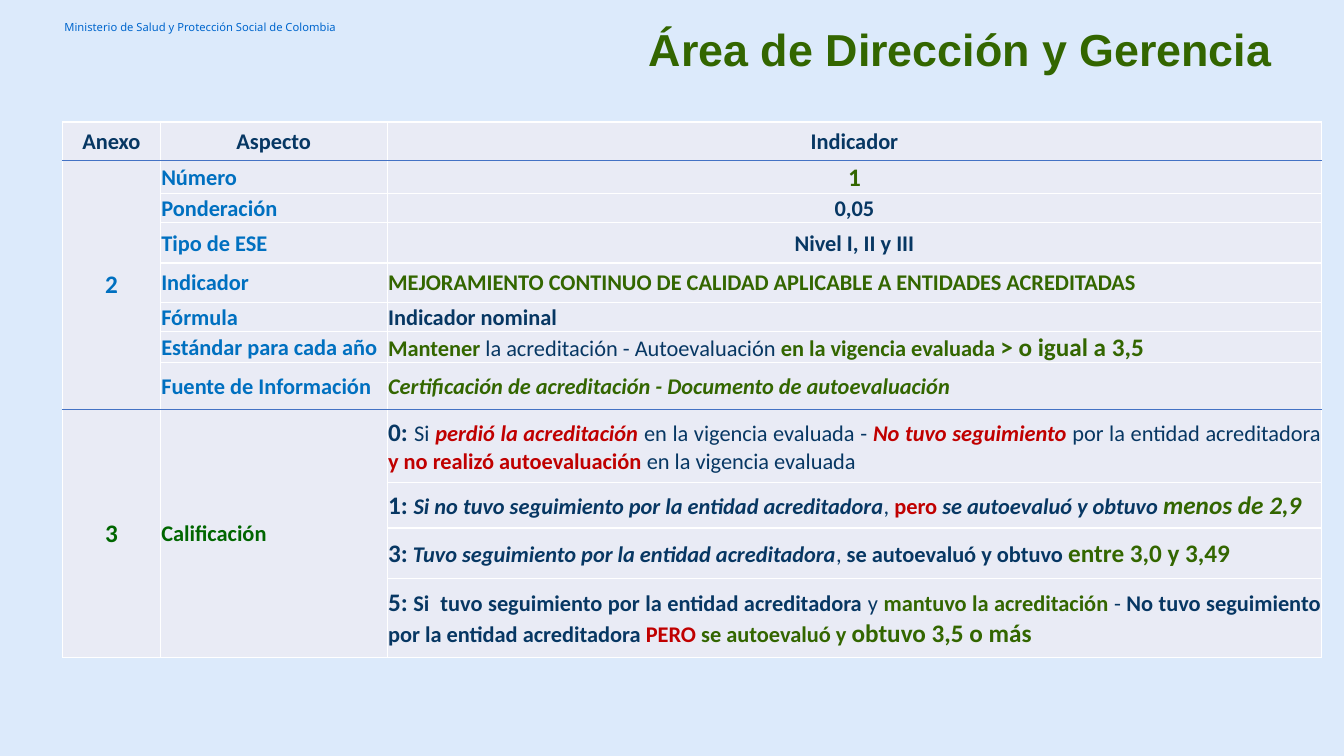
from lxml.etree import SubElement
from pptx import Presentation
from pptx.dml.color import RGBColor
from pptx.enum.text import MSO_ANCHOR, PP_ALIGN
from pptx.oxml.ns import qn
from pptx.util import Inches, Pt

NAVY = RGBColor(0x07, 0x37, 0x63)
BLUE = RGBColor(0x00, 0x70, 0xC0)
HEADER_BLUE = RGBColor(0x00, 0x66, 0xCD)
RULE_BLUE = RGBColor(0x44, 0x72, 0xC4)
GREEN = RGBColor(0x33, 0x66, 0x00)
DARK_GREEN = RGBColor(0x00, 0x66, 0x00)
RED = RGBColor(0xC0, 0x00, 0x00)
WHITE = RGBColor(0xFF, 0xFF, 0xFF)
CELL_FILL = RGBColor(0xE9, 0xEB, 0xF5)
BACKGROUND = RGBColor(0xDC, 0xEA, 0xFB)

COLUMN_WIDTHS = [0.97, 2.25, 9.27]
ROW_HEIGHTS = [0.38, 0.33, 0.29, 0.4, 0.39, 0.29, 0.31, 0.46, 0.73, 0.45, 0.5, 0.78]
RULED_ROWS = (0, 7)
LEFT, CENTER, JUSTIFY = PP_ALIGN.LEFT, PP_ALIGN.CENTER, PP_ALIGN.JUSTIFY

HEADINGS = ["Anexo", "Aspecto", "Indicador"]
ASPECTS = ["Número", "Ponderación", "Tipo de ESE", "Indicador", "Fórmula",
           "Estándar para cada año", "Fuente de Información"]
GROUPS = [
    (0, 1, 7, CENTER, ("2", BLUE, "b", 18)),
    (0, 8, 11, CENTER, ("3", DARK_GREEN, "b", 18)),
    (1, 8, 11, LEFT, ("Calificación", DARK_GREEN, "b")),
]
INDICATORS = [
    (CENTER, [("1", GREEN, "b", 18)]),
    (CENTER, [("0,05", NAVY, "b")]),
    (CENTER, [("Nivel I, II y III", NAVY, "b")]),
    (JUSTIFY, [("MEJORAMIENTO CONTINUO DE CALIDAD APLICABLE A ENTIDADES ACREDITADAS", GREEN, "b")]),
    (JUSTIFY, [("Indicador nominal", NAVY, "b")]),
    (LEFT, [("Mantener", GREEN, "b"),
            (" la acreditación - Autoevaluación ", NAVY, ""),
            ("en la vigencia evaluada ", GREEN, "b"),
            ("> o igual a 3,5", GREEN, "b", 18)]),
    (JUSTIFY, [("Certificación de acreditación - Documento de autoevaluación", GREEN, "bi")]),
    (JUSTIFY, [("0: ", NAVY, "b", 18),
               ("Si ", NAVY, ""),
               ("perdió la acreditación ", RED, "bi"),
               ("en la vigencia evaluada - ", NAVY, ""),
               ("No tuvo seguimiento ", RED, "bi"),
               ("por la entidad acreditadora ", NAVY, ""),
               ("y no realizó autoevaluación ", RED, "b"),
               ("en la vigencia evaluada", NAVY, "")]),
    (JUSTIFY, [("1: ", NAVY, "b", 18),
               ("Si no tuvo seguimiento por la entidad acreditadora", NAVY, "bi"),
               (", ", NAVY, ""),
               ("pero ", RED, "b"),
               ("se autoevaluó y obtuvo ", NAVY, "bi"),
               ("menos de 2,9", GREEN, "bi", 18)]),
    (JUSTIFY, [("3:", NAVY, "b", 18),
               (" ", NAVY, ""),
               ("Tuvo seguimiento por la entidad acreditadora", NAVY, "bi"),
               (", ", NAVY, ""),
               ("se autoevaluó y obtuvo ", NAVY, "b"),
               ("entre 3,0 y 3,49", GREEN, "b", 18)]),
    (JUSTIFY, [("5:", NAVY, "b", 18),
               (" ", NAVY, ""),
               ("Si  tuvo seguimiento por la entidad acreditadora ", NAVY, "b"),
               ("y ", NAVY, ""),
               ("mantuvo la acreditación", GREEN, "b"),
               (" - ", NAVY, ""),
               ("No tuvo seguimiento por la entidad acreditadora ", NAVY, "b"),
               ("PERO ", RED, "b"),
               ("se autoevaluó y ", GREEN, "b"),
               ("obtuvo 3,5 o más", GREEN, "b", 18)]),
]


def format_paragraph(paragraph, font_name, size, color, bold=False):
    paragraph.font.name = font_name
    paragraph.font.size = Pt(size)
    paragraph.font.bold = bold
    paragraph.font.color.rgb = color


def add_ministry_name(slide):
    shape = slide.shapes.add_textbox(Inches(0.54), Inches(0.14), Inches(3.12), Inches(0.26))
    shape.text_frame.word_wrap = True
    shape.text_frame.vertical_anchor = MSO_ANCHOR.MIDDLE
    shape.text_frame.text = "Ministerio de Salud y Protección Social de Colombia"
    format_paragraph(shape.text_frame.paragraphs[0], "Noto Sans", 8, HEADER_BLUE)


def set_title(slide):
    title = slide.shapes.title
    title.left, title.top = Inches(5.56), Inches(0.17)
    title.width, title.height = Inches(7.16), Inches(0.7)
    title.text_frame.text = "Área de Dirección y Gerencia"
    title.text_frame.vertical_anchor = MSO_ANCHOR.MIDDLE
    paragraph = title.text_frame.paragraphs[0]
    paragraph.alignment = PP_ALIGN.RIGHT
    paragraph.line_spacing = 0.9
    format_paragraph(paragraph, "Arial", 32, GREEN, True)


def write_cell(cell, alignment, pieces):
    paragraph = cell.text_frame.paragraphs[0]
    paragraph.alignment = alignment
    paragraph.font.name = "Calibri"
    for text, color, style, *size in pieces:
        run = paragraph.add_run()
        run.text = text
        run.font.size = Pt(size[0] if size else 16)
        run.font.bold = "b" in style
        run.font.italic = "i" in style
        run.font.color.rgb = color


def set_borders(cell, top, bottom):
    properties = cell._tc.get_or_add_tcPr()
    sides = [("a:lnL", WHITE), ("a:lnR", WHITE), ("a:lnT", top), ("a:lnB", bottom)]
    for position, (tag, color) in enumerate(sides):
        line = SubElement(properties, qn(tag), w=str(Pt(1)))
        fill = SubElement(line, qn("a:solidFill"))
        SubElement(fill, qn("a:srgbClr"), val=str(color))
        properties.insert(position, line)


def format_cell(cell, row):
    cell.margin_left = cell.margin_right = cell.margin_top = Inches(0.01)
    cell.margin_bottom = 0
    cell.vertical_anchor = MSO_ANCHOR.MIDDLE
    cell.fill.solid()
    cell.fill.fore_color.rgb = CELL_FILL
    set_borders(cell,
                RULE_BLUE if row - 1 in RULED_ROWS else WHITE,
                RULE_BLUE if row in RULED_ROWS else WHITE)


def add_indicator_table(slide):
    table = slide.shapes.add_table(
        len(ROW_HEIGHTS), len(COLUMN_WIDTHS), Inches(0.62), Inches(1.21),
        Inches(sum(COLUMN_WIDTHS)), Inches(sum(ROW_HEIGHTS))).table
    table.first_row = table.horz_banding = False
    for column, width in zip(table.columns, COLUMN_WIDTHS):
        column.width = Inches(width)
    for index, height in enumerate(ROW_HEIGHTS):
        table.rows[index].height = Inches(height)
        for cell in table.rows[index].cells:
            format_cell(cell, index)
    for column, heading in enumerate(HEADINGS):
        write_cell(table.cell(0, column), CENTER, [(heading, NAVY, "b")])
    for row, aspect in enumerate(ASPECTS, 1):
        write_cell(table.cell(row, 1), LEFT, [(aspect, BLUE, "b")])
    for row, (alignment, pieces) in enumerate(INDICATORS, 1):
        write_cell(table.cell(row, 2), alignment, pieces)
    for column, first, last, alignment, piece in GROUPS:
        table.cell(first, column).merge(table.cell(last, column))
        write_cell(table.cell(first, column), alignment, [piece])
    table.cell(6, 2).vertical_anchor = MSO_ANCHOR.BOTTOM


def main():
    presentation = Presentation()
    presentation.slide_width, presentation.slide_height = Inches(13.33), Inches(7.5)
    slide = presentation.slides.add_slide(presentation.slide_layouts[5])
    slide.background.fill.solid()
    slide.background.fill.fore_color.rgb = BACKGROUND
    add_ministry_name(slide)
    set_title(slide)
    add_indicator_table(slide)
    presentation.save("out.pptx")


if __name__ == "__main__":
    main()
